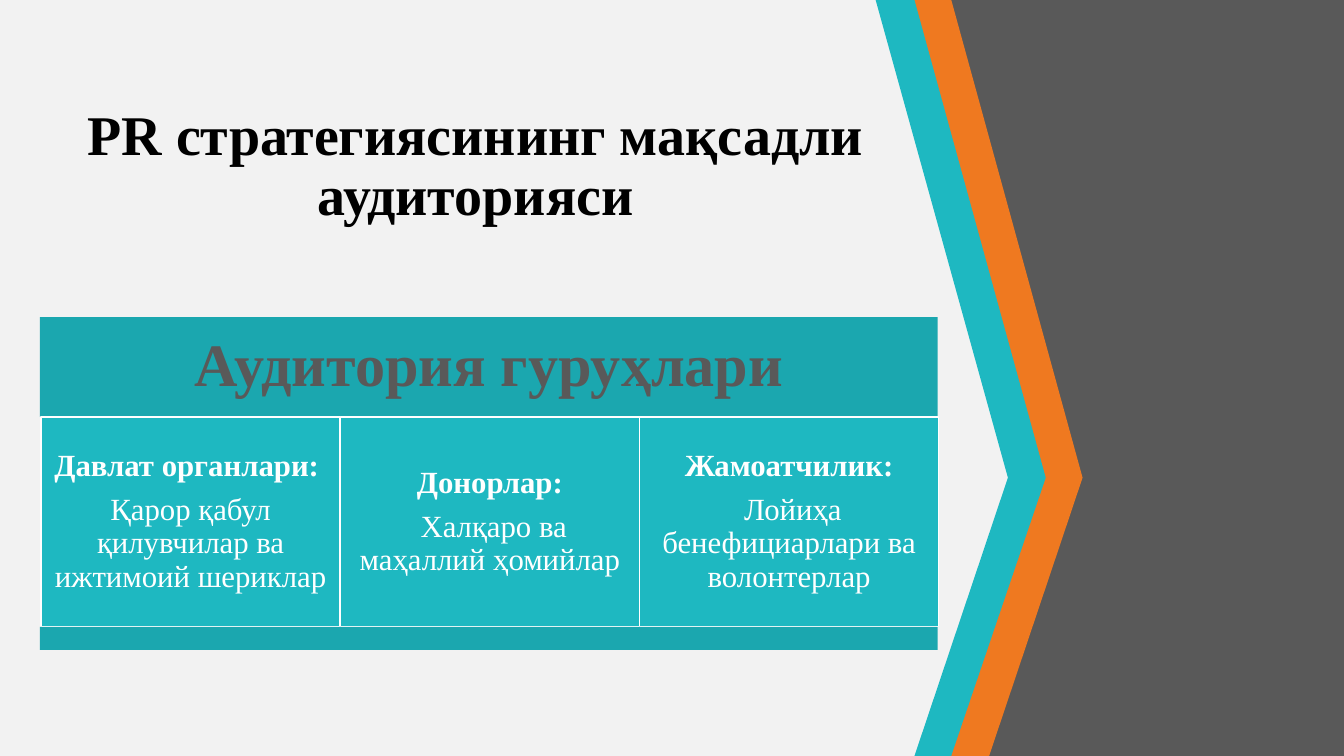
from pptx import Presentation
from pptx.dml.color import RGBColor
from pptx.enum.shapes import MSO_SHAPE as Preset
from pptx.enum.text import MSO_ANCHOR as Anchor, MSO_AUTO_SIZE as AutoSize, PP_ALIGN as Align
from pptx.util import Pt

PX = 9525
FONT = "Times New Roman"
COLORS = {
    "background": "F2F2F2",
    "dark": "595959",
    "orange": "EF7920",
    "teal": "1EB8C1",
    "deep_teal": "1BA7AF",
    "white": "FFFFFF",
    "black": "000000",
}
CHEVRONS = [
    ("dark", [(885, 0), (1280, 0), (1280, 720), (921, 720), (1010, 455)]),
    ("orange", [(855, 0), (906, 0), (1031, 455), (942, 720), (891, 720), (980, 455)]),
    ("teal", [(834, 0), (871, 0), (996, 455), (906, 720), (871, 720), (960, 455)]),
]
AUDIENCES = [
    ("Давлат органлари: ", "Қарор қабул қилувчилар ва ижтимоий шериклар"),
    ("Донорлар:", " Халқаро ва маҳаллий ҳомийлар"),
    ("Жамоатчилик:", " Лойиҳа бенефициарлари ва волонтерлар"),
]


def color(name):
    return RGBColor.from_string(COLORS[name])


def paint(shape, fill, line=None):
    shape.shadow.inherit = False
    shape.fill.solid()
    shape.fill.fore_color.rgb = color(fill)
    if line:
        shape.line.color.rgb = color(line)
        shape.line.width = Pt(1)
    else:
        shape.line.fill.background()


def write(para, text, size, ink, bold=False, after=0):
    para.alignment = Align.CENTER
    para.line_spacing = 0.9
    para.space_before = Pt(0)
    para.space_after = Pt(after)
    span = para.add_run()
    span.text = text
    span.font.name = FONT
    span.font.size = Pt(size)
    span.font.bold = bold
    span.font.color.rgb = color(ink)


def set_frame(frame, inset):
    frame.word_wrap = True
    frame.vertical_anchor = Anchor.MIDDLE
    frame.margin_left = frame.margin_right = inset * PX
    frame.margin_top = frame.margin_bottom = inset * PX


def add_block(shapes, left, top, width, height, fill, line=None):
    box = [length * PX for length in (left, top, width, height)]
    block = shapes.add_shape(Preset.RECTANGLE, *box)
    paint(block, fill, line)
    return block


def draw_chevrons(page):
    for fill, points in CHEVRONS:
        builder = page.shapes.build_freeform(*points[0], scale=PX)
        builder.add_line_segments(points[1:], close=True)
        paint(builder.convert_to_shape(), fill)


def place_title(page, left, top, width, height):
    title = page.shapes.title
    title.left, title.top = left * PX, top * PX
    title.width, title.height = width * PX, height * PX
    frame = title.text_frame
    frame.word_wrap = True
    frame.auto_size = AutoSize.NONE
    frame.vertical_anchor = Anchor.BOTTOM
    write(frame.paragraphs[0], "PR стратегиясининг мақсадли аудиторияси", 40, "black", bold=True)


def draw_audiences(page, left, top, width, height):
    header_height, footer_height = 95, 22
    body_height = height - header_height - footer_height
    column_width = width // len(AUDIENCES)
    shapes = page.shapes.add_group_shape().shapes

    header = add_block(shapes, left, top, width, header_height, "deep_teal")
    set_frame(header.text_frame, 17)
    write(header.text_frame.paragraphs[0], "Аудитория гуруҳлари", 43, "dark", bold=True, after=15)

    for index, (name, members) in enumerate(AUDIENCES):
        column = add_block(shapes, left + 1 + index * column_width, top + header_height,
                           column_width, body_height, "teal", "white")
        frame = column.text_frame
        set_frame(frame, 9)
        write(frame.paragraphs[0], name, 22, "white", bold=True, after=7.7)
        write(frame.add_paragraph(), members, 22, "white", after=7.7)

    add_block(shapes, left, top + height - footer_height, width, footer_height, "deep_teal")


def main():
    deck = Presentation()
    deck.slide_width, deck.slide_height = 1280 * PX, 720 * PX
    page = deck.slides.add_slide(deck.slide_layouts[0])
    subtitle = page.placeholders[1].element
    subtitle.getparent().remove(subtitle)
    page.background.fill.solid()
    page.background.fill.fore_color.rgb = color("background")
    draw_chevrons(page)
    place_title(page, 66, 57, 774, 165)
    draw_audiences(page, 38, 302, 855, 317)
    deck.save("out.pptx")


if __name__ == "__main__":
    main()
